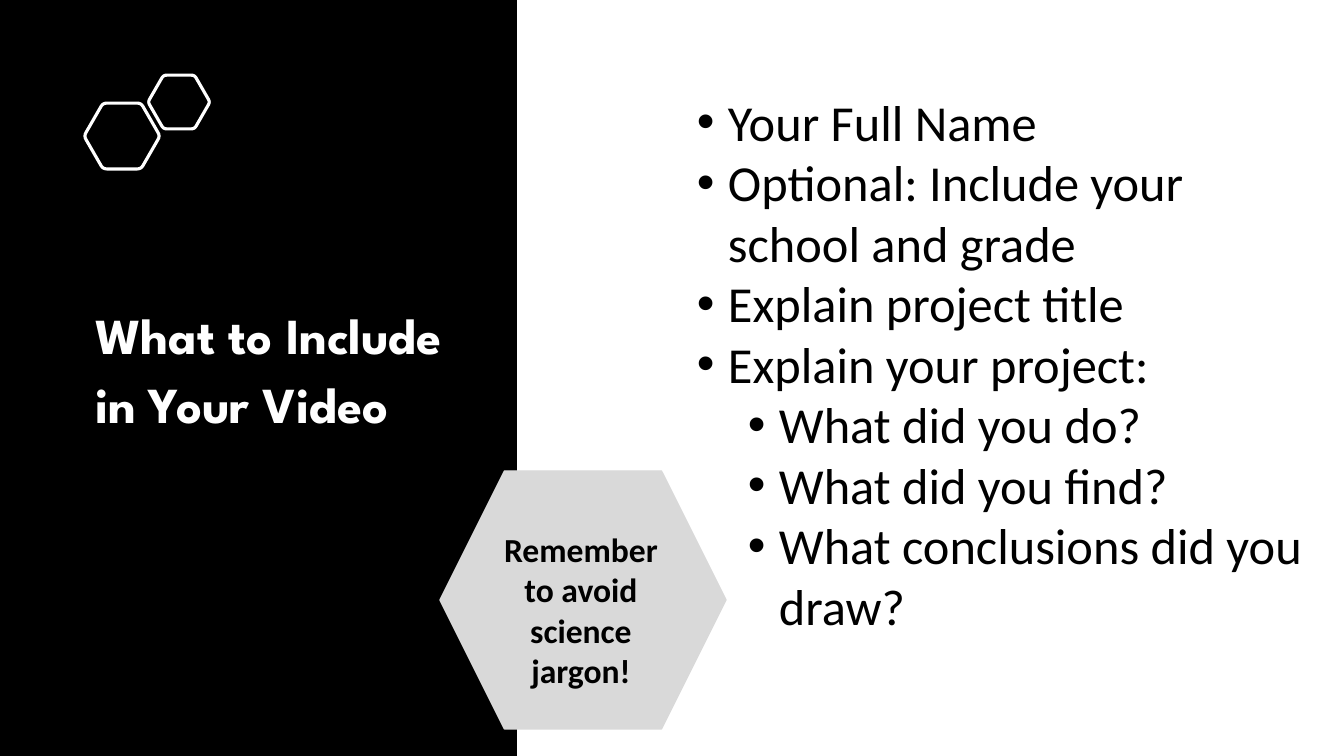
from math import cos, pi, sin

from lxml.etree import SubElement
from pptx import Presentation
from pptx.dml.color import RGBColor
from pptx.enum.shapes import MSO_SHAPE as Preset
from pptx.enum.text import MSO_ANCHOR as Anchor, MSO_AUTO_SIZE as AutoSize, PP_ALIGN as Align
from pptx.oxml.ns import qn
from pptx.util import Emu, Pt

EMU_PER_PX = 914400 / 100.8
COLORS = {"black": "000000", "white": "FFFFFF", "gray": "D9D9D9"}
BODY_FONT = "Calibri"
TITLE_FONT = "League Spartan"
TOPICS = [
    ("Your Full Name", 0),
    ("Optional: Include your school and grade", 0),
    ("Explain project title", 0),
    ("Explain your project:", 0),
    ("What did you do?", 1),
    ("What did you find?", 1),
    ("What conclusions did you draw?", 1),
]


def px(length):
    return Emu(round(length * EMU_PER_PX))


def color(name):
    return RGBColor.from_string(COLORS[name])


def place(shape, left, top, width, height):
    shape.left, shape.top = px(left), px(top)
    shape.width, shape.height = px(width), px(height)


def add_text(para, text, size, font, ink, bold=False):
    span = para.add_run()
    span.text = text
    span.font.size = Pt(size)
    span.font.name = font
    span.font.bold = bold
    span.font.color.rgb = color(ink)


def set_frame(frame, anchor, top=5):
    frame.word_wrap = True
    frame.auto_size = AutoSize.NONE
    frame.vertical_anchor = anchor
    frame.margin_left = frame.margin_right = px(10)
    frame.margin_top, frame.margin_bottom = px(top), px(5)


def add_filled(page, preset, bounds, fill):
    shape = page.shapes.add_shape(preset, *map(px, bounds))
    shape.shadow.inherit = False
    shape.fill.solid()
    shape.fill.fore_color.rgb = color(fill)
    shape.line.color.rgb = color(fill)
    shape.line.width = Pt(1)
    return shape


def add_panel(page):
    panel = add_filled(page, Preset.RECTANGLE, (0, 0, 517, 756), "black")
    panel.line.fill.background()
    panel.element.getparent().insert(2, panel.element)


def rounded_hexagon_points(center_x, center_y, radius, cut=0.1, steps=4):
    corners = [
        (center_x + radius * cos(k * pi / 3), center_y + radius * sin(k * pi / 3))
        for k in range(6)
    ]
    points = []
    for k, corner in enumerate(corners):
        before, after = corners[k - 1], corners[(k + 1) % 6]
        for step in range(steps + 1):
            t = step / steps
            points.append(tuple(
                px(c + cut * ((1 - t) ** 2 * (b - c) + t ** 2 * (a - c)))
                for b, c, a in zip(before, corner, after)
            ))
    return points


def add_outline_hexagon(page, center_x, center_y, radius):
    start, *rest = rounded_hexagon_points(center_x, center_y, radius)
    builder = page.shapes.build_freeform(*start)
    builder.add_line_segments(rest, close=True)
    hexagon = builder.convert_to_shape()
    hexagon.shadow.inherit = False
    hexagon.fill.background()
    hexagon.line.color.rgb = color("white")
    hexagon.line.width = Pt(2.25)


def add_title(page, text):
    title = page.shapes.title
    place(title, 85, 129, 395, 472)
    set_frame(title.text_frame, Anchor.MIDDLE)
    para = title.text_frame.paragraphs[0]
    para.alignment = Align.LEFT
    para.line_spacing = 1.13
    add_text(para, text, 36, TITLE_FONT, "white", bold=True)


def set_bullet(para, level):
    para.level = level
    props = para._p.get_or_add_pPr()
    props.set("marL", str(px(31 + 51 * level)))
    props.set("indent", str(-px(31)))
    SubElement(props, qn("a:buFont"), typeface="Arial")
    SubElement(props, qn("a:buChar"), char="•")


def add_topics(page):
    body = page.placeholders[1]
    place(body, 687, 15, 649, 661)
    frame = body.text_frame
    set_frame(frame, Anchor.TOP, top=76)
    for index, (text, level) in enumerate(TOPICS):
        para = frame.add_paragraph() if index else frame.paragraphs[0]
        set_bullet(para, level)
        para.alignment = Align.LEFT
        para.space_before = para.space_after = Pt(0)
        add_text(para, text, 36, BODY_FONT, "black")


def add_reminder(page, text):
    add_filled(page, Preset.HEXAGON, (440, 471, 286, 258), "gray")
    box = page.shapes.add_textbox(*map(px, (480, 524, 202, 173)))
    set_frame(box.text_frame, Anchor.TOP)
    para = box.text_frame.paragraphs[0]
    para.alignment = Align.CENTER
    add_text(para, text, 24, BODY_FONT, "black", bold=True)


def main():
    deck = Presentation()
    deck.slide_width, deck.slide_height = px(1344), px(756)
    page = deck.slides.add_slide(deck.slide_layouts[1])
    page.background.fill.solid()
    page.background.fill.fore_color.rgb = color("white")
    add_panel(page)
    add_outline_hexagon(page, 122, 136, 38)
    add_outline_hexagon(page, 179, 102, 31)
    add_title(page, "What to Include in Your Video")
    add_topics(page)
    add_reminder(page, "Remember to avoid science jargon!")
    deck.save("out.pptx")


if __name__ == "__main__":
    main()
